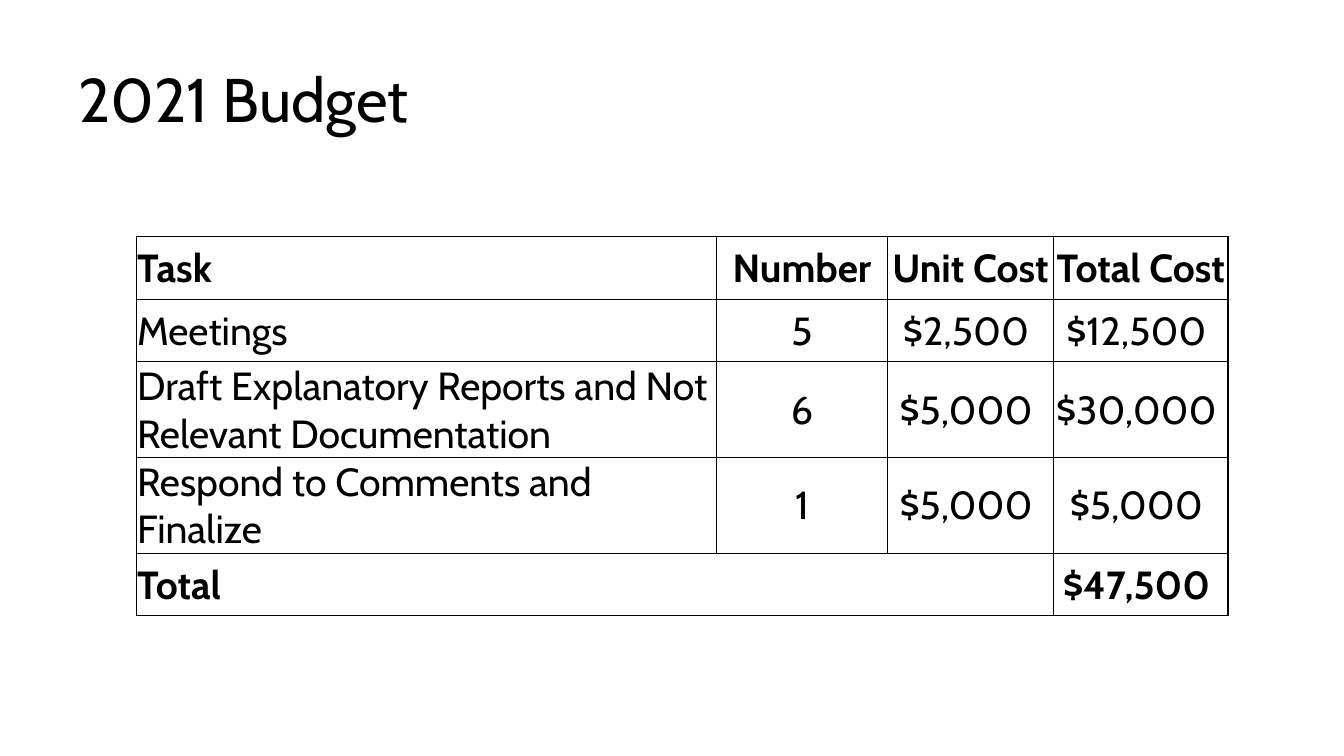
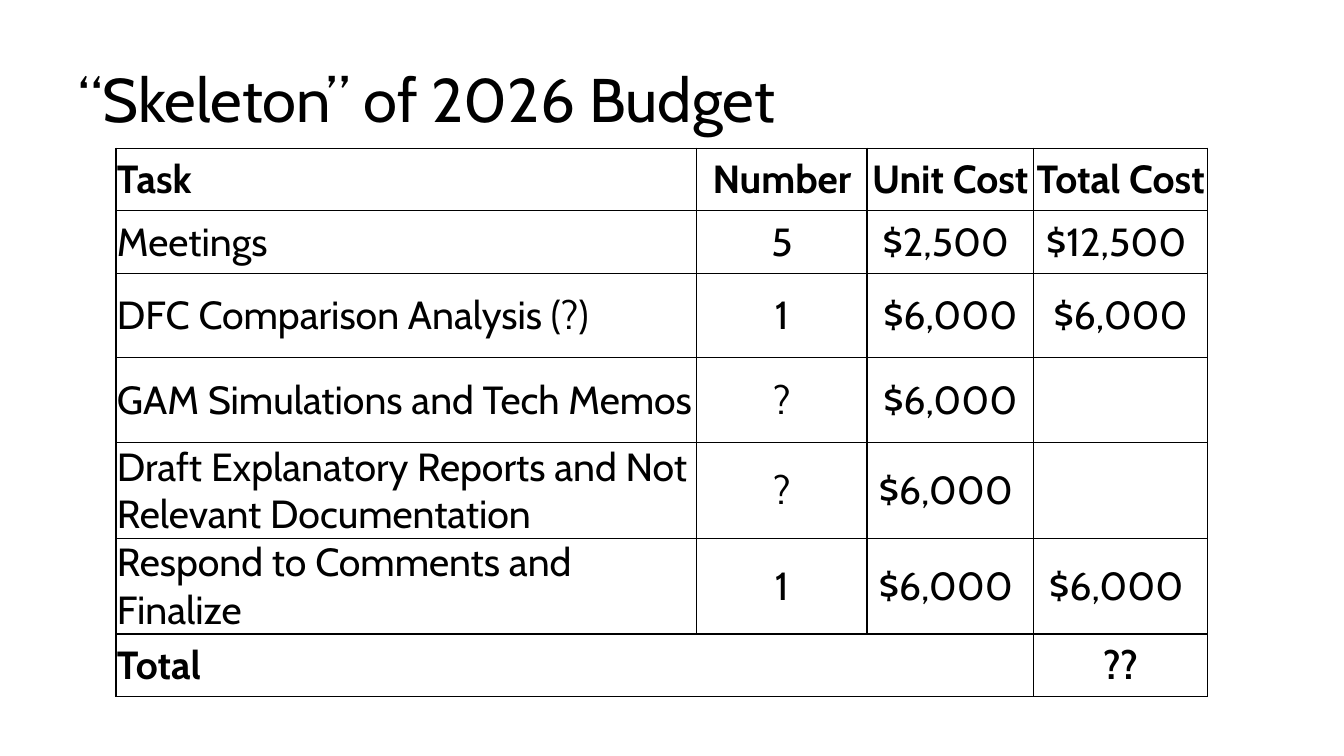
from dataclasses import dataclass

from lxml import etree
from pptx import Presentation
from pptx.dml.color import RGBColor
from pptx.enum.text import MSO_ANCHOR, PP_ALIGN
from pptx.oxml.ns import qn
from pptx.util import Inches, Pt

LEFT, CENTER = PP_ALIGN.LEFT, PP_ALIGN.CENTER
MIDDLE = MSO_ANCHOR.MIDDLE
BLANK_LAYOUT = 6


@dataclass(frozen=True)
class Theme:
    font: str = "Cabin"
    ink: str = "000000"
    paper: str = "FFFFFF"
    title_size: int = 44
    table_size: int = 28
    border_width: int = 1


THEME = Theme()
TITLE_FRAME = (0.68, 0.29, 11.5, 1.45)
COLUMN_WIDTHS = (5.76, 1.69, 1.65, 1.73)
SINGLE, ROOMY, DOUBLE = 0.62, 0.84, 0.95

HEADER = (SINGLE, "Task", "Number", "Unit Cost", "Total Cost")
MEETINGS = (SINGLE, "Meetings", "5", "$2,500 ", "$12,500 ")
REPORTS = "Draft Explanatory Reports and Not Relevant Documentation"
RESPONSE = "Respond to Comments and Finalize"

BUDGETS = [
    {
        "title": "2021 Budget",
        "corner": (1.35, 2.35),
        "tasks": [
            MEETINGS,
            (DOUBLE, REPORTS, "6", "$5,000 ", "$30,000 "),
            (DOUBLE, RESPONSE, "1", "$5,000 ", "$5,000 "),
        ],
        "total": "$47,500 ",
    },
    {
        "title": "“Skeleton” of 2026 Budget",
        "corner": (1.15, 1.47),
        "tasks": [
            MEETINGS,
            (ROOMY, "DFC Comparison Analysis (?)", "1", "$6,000", "$6,000"),
            (ROOMY, "GAM Simulations and Tech Memos", "?", "$6,000", ""),
            (DOUBLE, REPORTS, "?", "$6,000 ", ""),
            (DOUBLE, RESPONSE, "1", "$6,000 ", "$6,000 "),
        ],
        "total": "??",
    },
]


def write_text(frame, text, *, size, bold=False, align=LEFT, spacing=None):
    para = frame.paragraphs[0]
    para.alignment = align
    para.line_spacing = spacing
    para.font.size = Pt(size)
    if text:
        span = para.add_run()
        span.text = text
        span.font.name = THEME.font
        span.font.size = Pt(size)
        span.font.bold = bold
        span.font.color.rgb = RGBColor.from_string(THEME.ink)


def add_title(page, text):
    box = page.shapes.add_textbox(*map(Inches, TITLE_FRAME))
    box.text_frame.word_wrap = True
    box.text_frame.vertical_anchor = MIDDLE
    write_text(box.text_frame, text, size=THEME.title_size, spacing=0.9)


def style_cell(cell):
    cell.vertical_anchor = MIDDLE
    cell.margin_left = cell.margin_right = cell.margin_top = Inches(0.01)
    cell.margin_bottom = 0
    properties = cell._tc.get_or_add_tcPr()
    for side in ("lnL", "lnR", "lnT", "lnB"):
        line = etree.SubElement(properties, qn(f"a:{side}"), w=str(Pt(THEME.border_width)))
        fill = etree.SubElement(line, qn("a:solidFill"))
        etree.SubElement(fill, qn("a:srgbClr"), val=THEME.ink)
    cell.fill.background()


def add_budget_table(page, corner, tasks, total):
    rows = [HEADER, *tasks, (SINGLE, "Total", "", "", total)]
    last = len(rows) - 1
    size = (sum(COLUMN_WIDTHS), sum(row[0] for row in rows))
    frame = page.shapes.add_table(len(rows), len(COLUMN_WIDTHS), *map(Inches, corner + size))
    table = frame.table
    table.first_row = table.horz_banding = False
    for column, width in zip(table.columns, COLUMN_WIDTHS):
        column.width = Inches(width)
    for row_index, (height, *texts) in enumerate(rows):
        table.rows[row_index].height = Inches(height)
        for column_index, text in enumerate(texts):
            cell = table.cell(row_index, column_index)
            style_cell(cell)
            write_text(cell.text_frame, text, size=THEME.table_size,
                       bold=row_index in (0, last),
                       align=CENTER if column_index else LEFT)
    table.cell(last, 0).merge(table.cell(last, 2))


def main():
    deck = Presentation()
    deck.slide_width, deck.slide_height = Inches(13.33), Inches(7.5)
    for budget in BUDGETS:
        page = deck.slides.add_slide(deck.slide_layouts[BLANK_LAYOUT])
        page.background.fill.solid()
        page.background.fill.fore_color.rgb = RGBColor.from_string(THEME.paper)
        add_title(page, budget["title"])
        add_budget_table(page, budget["corner"], budget["tasks"], budget["total"])
    deck.save("out.pptx")


if __name__ == "__main__":
    main()
